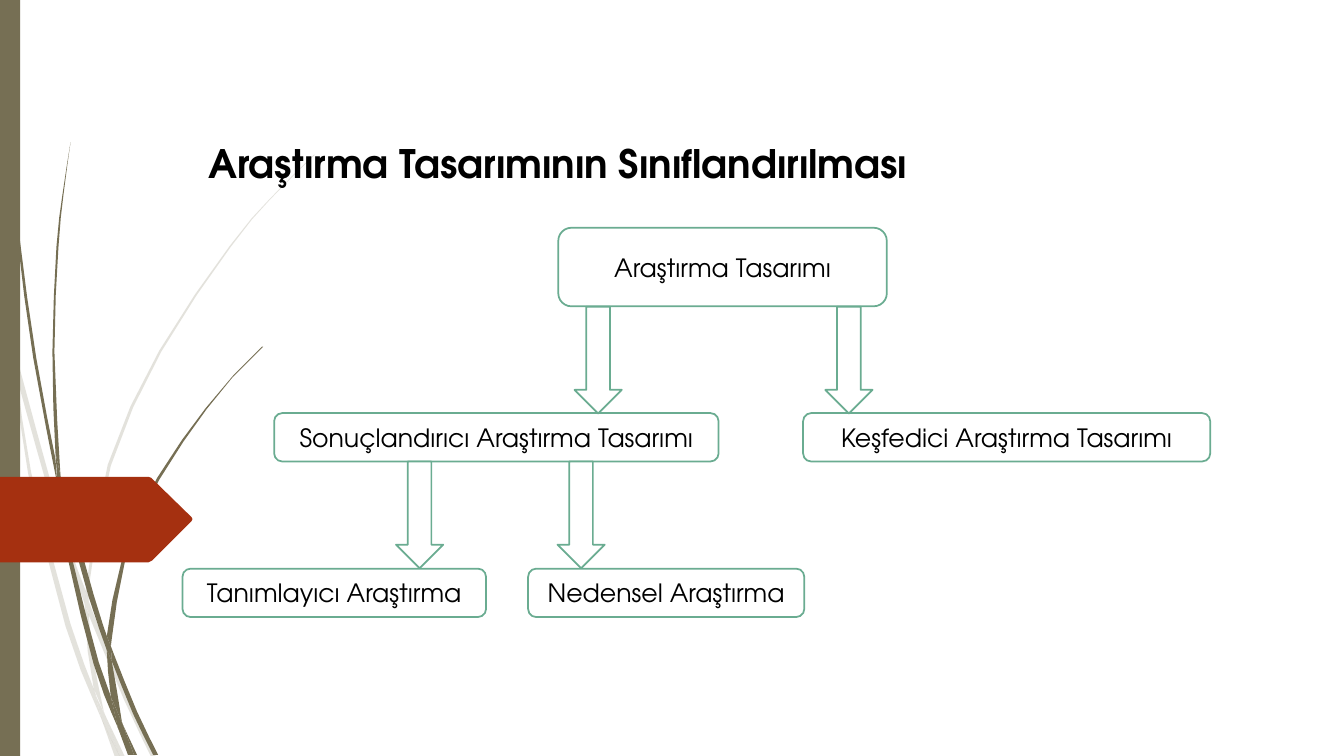
import pptx
import pptx.dml.color
import pptx.enum.shapes
import pptx.enum.text
import pptx.oxml
import pptx.oxml.ns
import pptx.util
from pptx.util import Cm

OLIVE = pptx.dml.color.RGBColor(0x76, 0x6F, 0x54)
RUST = pptx.dml.color.RGBColor(0xA5, 0x30, 0x10)
GREEN = pptx.dml.color.RGBColor(0x6A, 0xAC, 0x91)
WHITE = pptx.dml.color.RGBColor(0xFF, 0xFF, 0xFF)
BLACK = pptx.dml.color.RGBColor(0x00, 0x00, 0x00)
FONT = "TeX Gyre Adventor"
SHAPES = pptx.enum.shapes.MSO_SHAPE
ALIGN = pptx.enum.text.PP_ALIGN
ANCHOR = pptx.enum.text.MSO_ANCHOR

GRID = Cm(0.0254)  # one unit of the outline coordinates below

# Each blade of grass is a pair of edges: one way out and the other way back.
PALE_BLADES = [
    ([(11, 350), (9, 322), (0, 282)], [(0, 299), (10, 344), (11, 350)]),
    ([(17, 376), (58, 522), (84, 599)], [(85, 586), (62, 520), (14, 345)]),
    ([(88, 610), (123, 694), (150, 751)],
     [(155, 751), (127, 692), (92, 607), (88, 596)]),
    ([(105, 711), (119, 751)], [(124, 751), (105, 711)]),
    ([(11, 350), (28, 470), (65, 621), (92, 693), (101, 714)],
     [(99, 707), (93, 683), (70, 619), (31, 469), (17, 376), (11, 350)]),
    ([(84, 599), (87, 646), (93, 683), (105, 711)],
     [(103, 706), (91, 646), (88, 609), (84, 599)]),
    ([(88, 596), (88, 584), (110, 462), (160, 349), (229, 245), (268, 198), (312, 154)],
     [(312, 153), (268, 197), (228, 244), (158, 348), (107, 461), (85, 586)]),
    ([(101, 714), (114, 751)], [(119, 751), (101, 714)]),
    ([(88, 610), (88, 596)], [(85, 586), (84, 599), (88, 608)]),
    ([(93, 683), (101, 714), (119, 751)], [(105, 711), (96, 692), (93, 683)]),
]
DARK_BLADES = [
    ([(3, 0), (4, 48), (7, 110), (17, 233), (33, 355), (57, 481)],
     [(55, 455), (36, 355), (19, 232), (8, 109), (5, 48), (4, 0)]),
    ([(64, 505), (88, 592), (106, 645)], [(106, 631), (93, 590), (60, 472)]),
    ([(111, 656), (132, 708), (152, 749)],
     [(157, 749), (136, 706), (113, 649), (110, 641)]),
    ([(57, 477), (68, 557), (93, 659), (111, 708), (117, 722)],
     [(116, 717), (110, 691), (98, 657), (72, 556), (64, 505), (57, 477)]),
    ([(60, 472), (54, 349), (58, 245), (63, 193), (70, 141)],
     [(70, 141), (62, 193), (56, 245), (52, 349), (55, 449), (60, 472)]),
    ([(122, 719), (133, 749)], [(136, 749), (122, 719)]),
    ([(57, 477), (64, 505)], [(60, 472), (55, 449), (57, 477)]),
    ([(111, 633), (125, 552), (158, 476), (205, 406), (231, 374), (261, 344)],
     [(260, 344), (231, 373), (204, 405), (156, 474), (122, 551), (106, 631), (110, 641)]),
    ([(117, 722), (127, 749)], [(131, 749), (117, 722)]),
    ([(106, 645), (110, 691), (122, 719)], [(121, 716), (111, 656), (106, 645)]),
    ([(106, 645), (111, 656)], [(110, 641), (106, 631), (106, 645)]),
    ([(110, 691), (117, 722), (130, 749)], [(133, 749), (122, 719), (110, 691)]),
]
PENTAGON = [(0, 473), (147, 473), (150, 474), (190, 513), (191, 515),
            (190, 517), (151, 556), (147, 558), (0, 558)]

# Text, left, top, width, height in centimetres
BOXES = [
    ("Araştırma Tasarımı", 14.07, 5.74, 8.28, 1.98),
    ("Keşfedici Araştırma Tasarımı", 20.24, 10.41, 10.26, 1.22),
    ("Sonuçlandırıcı Araştırma Tasarımı", 6.91, 10.41, 11.2, 1.22),
    ("Tanımlayıcı Araştırma", 4.6, 14.33, 7.65, 1.22),
    ("Nedensel Araştırma", 13.31, 14.33, 6.96, 1.22),
]
ARROWS = [(14.48, 7.73), (20.8, 7.73), (9.98, 11.63), (14.05, 11.63)]


def smooth(points):
    """Add the Catmull-Rom midpoint to each long span of the edge."""
    padded = [points[0], *points, points[-1]]
    curve = [points[0]]
    for a, b, c, d in zip(padded, padded[1:], padded[2:], padded[3:]):
        if len(points) > 2 and abs(c[1] - b[1]) > 40:
            curve.append(tuple((9 * (q + r) - p - s) / 16
                               for p, q, r, s in zip(a, b, c, d)))
        curve.append(c)
    return curve


def paint(shape, fill, line=None):
    shape.shadow.inherit = False
    shape.fill.solid()
    shape.fill.fore_color.rgb = fill
    if line is None:
        shape.line.fill.background()
    else:
        shape.line.color.rgb = line
        shape.line.width = pptx.util.Pt(1.25)


def set_opacity(shape, percent):
    color = shape.fill._xPr.find(".//" + pptx.oxml.ns.qn("a:srgbClr"))
    alpha = pptx.oxml.parse_xml(
        f'<a:alpha {pptx.oxml.ns.nsdecls("a")} val="{percent * 1000}"/>')
    color.append(alpha)


def add_outline(slide, points, fill):
    vertices = [(x * GRID, y * GRID) for x, y in points]
    builder = slide.shapes.build_freeform(*vertices[0])
    builder.add_line_segments(vertices[1:], close=True)
    shape = builder.convert_to_shape()
    paint(shape, fill)
    return shape


def add_blade(slide, edges):
    return add_outline(slide, smooth(edges[0]) + smooth(edges[1]), OLIVE)


def add_shape(slide, kind, left, top, width, height, fill, line=None):
    shape = slide.shapes.add_shape(kind, Cm(left), Cm(top), Cm(width), Cm(height))
    paint(shape, fill, line)
    return shape


def write_text(shape, text, alignment, anchor, **font_format):
    frame = shape.text_frame
    frame.word_wrap = True
    frame.vertical_anchor = anchor
    paragraph = frame.paragraphs[0]
    paragraph.alignment = alignment
    run = paragraph.add_run()
    run.text = text
    run.font.color.rgb = BLACK
    for name, value in {"name": FONT, **font_format}.items():
        setattr(run.font, name, value)


def add_title(slide, text):
    title = slide.shapes.add_textbox(Cm(5), Cm(3.38), Cm(18.52), Cm(3.43))
    write_text(title, text, ALIGN.JUSTIFY, ANCHOR.TOP,
               size=pptx.util.Pt(28), bold=True)


def add_box(slide, text, left, top, width, height):
    box = add_shape(slide, SHAPES.ROUNDED_RECTANGLE, left, top, width, height,
                    WHITE, GREEN)
    write_text(box, text, ALIGN.CENTER, ANCHOR.MIDDLE, size=pptx.util.Pt(18))


def main():
    presentation = pptx.Presentation()
    presentation.slide_width = Cm(33.87)
    presentation.slide_height = Cm(19.05)
    slide = presentation.slides.add_slide(presentation.slide_layouts[6])

    for edges in PALE_BLADES:
        set_opacity(add_blade(slide, edges), 20)
    for edges in DARK_BLADES:
        add_blade(slide, edges)
    add_shape(slide, SHAPES.RECTANGLE, 0, 0, 0.51, 19.05, OLIVE)
    add_outline(slide, PENTAGON, RUST)

    add_title(slide, "Araştırma Tasarımının Sınıflandırılması")
    for box in BOXES:
        add_box(slide, *box)
    for left, top in ARROWS:
        add_shape(slide, SHAPES.DOWN_ARROW, left, top, 1.19, 2.69, WHITE, GREEN)

    presentation.save("out.pptx")


if __name__ == "__main__":
    main()
